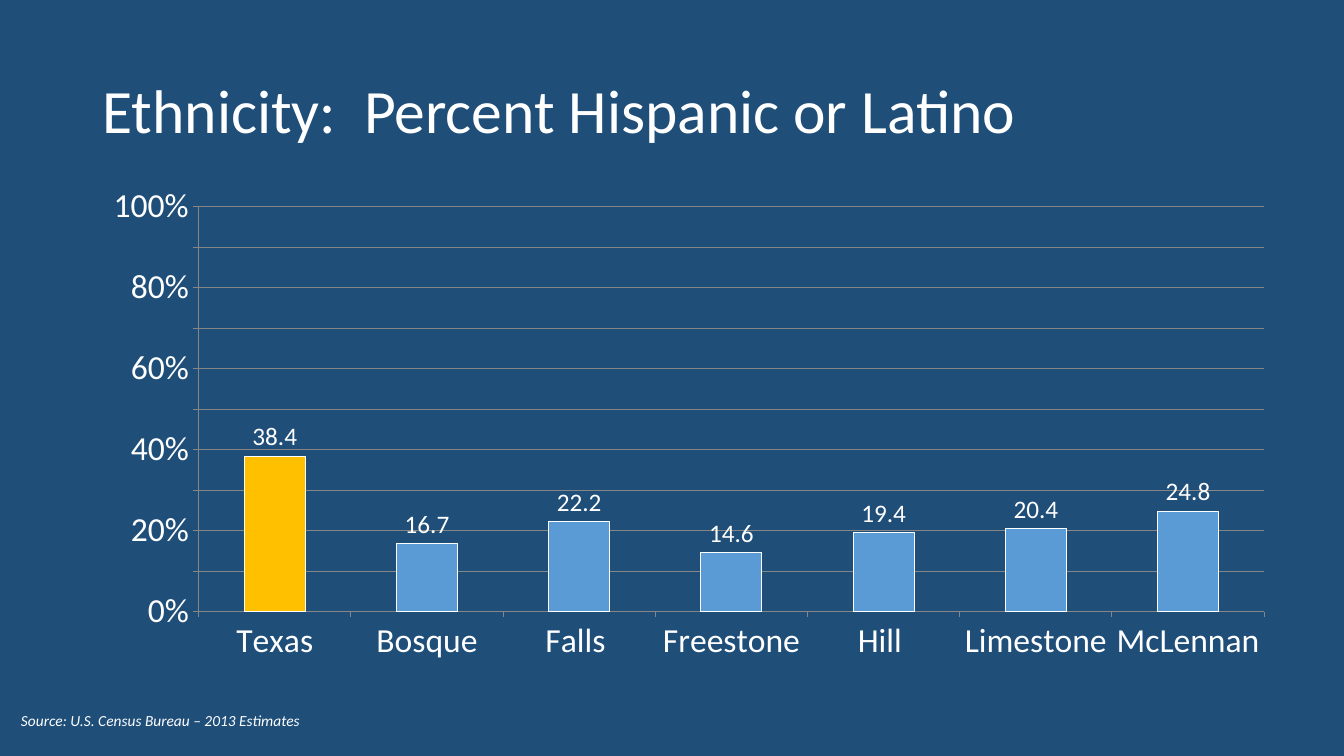
from pptx import Presentation
from pptx import util as u
from pptx.chart import data
from pptx.dml import color
from pptx.enum import chart as ch, text


def rgb(code):
    return color.RGBColor.from_string(code)


def style(font, size, name="Calibri"):
    font.name = name
    font.size = u.Pt(size)
    font.color.rgb = rgb("FFFFFF")


deck = Presentation()
deck.slide_width, deck.slide_height = u.Pt(960), u.Pt(540)
slide = deck.slides.add_slide(deck.slide_layouts[5])
slide.background.fill.solid()
slide.background.fill.fore_color.rgb = rgb("1F4E79")

heading = slide.shapes.title
heading.left, heading.top = u.Pt(66), u.Pt(28.75)
heading.width, heading.height = u.Pt(828), u.Pt(104.4)
heading.text_frame.text = "Ethnicity:  Percent Hispanic or Latino"
heading.text_frame.vertical_anchor = text.MSO_ANCHOR.MIDDLE
heading_line = heading.text_frame.paragraphs[0]
heading_line.alignment = text.PP_ALIGN.LEFT
heading_line.line_spacing = 0.9
style(heading_line.font, 44)

shares = {
    "Texas": 38.4,
    "Bosque": 16.7,
    "Falls ": 22.2,
    "Freestone": 14.6,
    "Hill ": 19.4,
    "Limestone": 20.4,
    "McLennan": 24.8,
}
county_data = data.CategoryChartData()
county_data.categories = list(shares)
county_data.add_series("Series 1", list(shares.values()))
ethnicity = slide.shapes.add_chart(
    ch.XL_CHART_TYPE.COLUMN_CLUSTERED,
    u.Pt(64.1), u.Pt(126), u.Pt(856), u.Pt(354.25), county_data,
).chart
ethnicity.has_title = False
ethnicity.has_legend = False
style(ethnicity.font, 18)

percent = ethnicity.value_axis
percent.minimum_scale, percent.maximum_scale = 0, 100
percent.major_unit = 10
percent.has_major_gridlines = True
percent.tick_labels.number_format = "0\\%"
percent.tick_labels.number_format_is_linked = False
for axis in (percent, ethnicity.category_axis):
    axis.major_tick_mark = ch.XL_TICK_MARK.OUTSIDE
    style(axis.tick_labels.font, 24)
for line in (percent.format.line, percent.major_gridlines.format.line,
             ethnicity.category_axis.format.line):
    line.color.rgb = rgb("868686")
    line.width = u.Pt(0.75)

columns = ethnicity.plots[0]
columns.gap_width = 150
columns.vary_by_categories = False
columns.has_data_labels = True
columns.data_labels.show_value = True
columns.data_labels.position = ch.XL_LABEL_POSITION.OUTSIDE_END
style(columns.data_labels.font, 18)

counties = columns.series[0]
texas = counties.points[0]
for bars, shade in ((counties, "5B9BD5"), (texas, "FFC000")):
    bars.format.fill.solid()
    bars.format.fill.fore_color.rgb = rgb(shade)
    bars.format.line.color.rgb = rgb("FFFFFF")
    bars.format.line.width = u.Pt(0.75)

source = slide.shapes.add_textbox(u.Pt(7.9), u.Pt(504.7), u.Pt(216), u.Pt(20.9))
source.text_frame.word_wrap = False
source.text_frame.auto_size = text.MSO_AUTO_SIZE.SHAPE_TO_FIT_TEXT
source.text_frame.text = "Source: U.S. Census Bureau – 2013 Estimates"
source_line = source.text_frame.paragraphs[0]
style(source_line.font, 11)
source_line.font.italic = True

deck.save("out.pptx")
